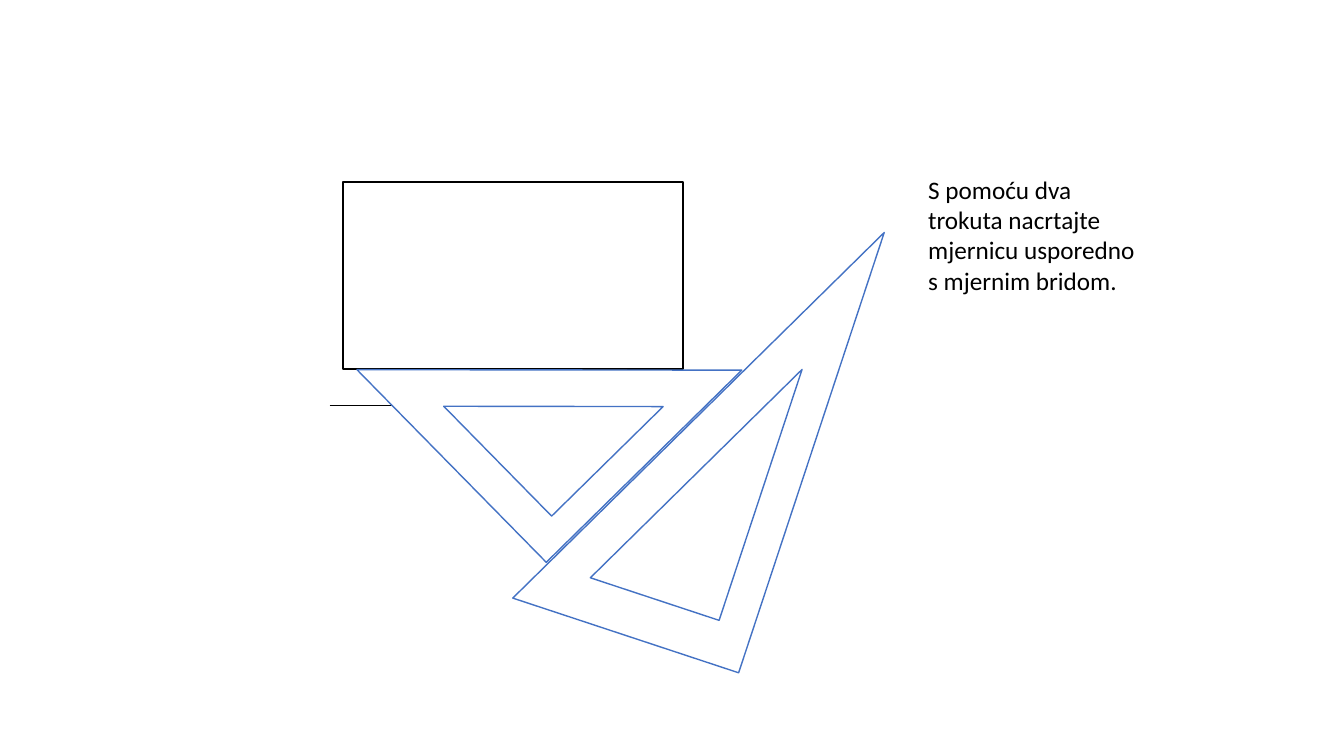
"""Build a slide that shows two set squares drawing a parallel line."""
from lxml import etree
from pptx import Presentation
from pptx import util as u
from pptx.dml.color import RGBColor
from pptx.enum import shapes, text
from pptx.oxml.ns import qn

BLACK = RGBColor(0x00, 0x00, 0x00)
WHITE = RGBColor(0xFF, 0xFF, 0xFF)
BLUE = RGBColor(0x44, 0x72, 0xC4)
FONT = "Calibri"
CELL = u.Inches(0.1)
COLUMNS, ROWS = 133.33, 75
HOLE_SHARE = 0.57


def grid(*cells):
    """Turn grid cells into slide lengths."""
    return [round(cell * CELL) for cell in cells]


def add_outline(slide, kind, box, color, width, angle=0):
    """Add an outlined preset shape in the box and return it."""
    shape = slide.shapes.add_shape(kind, *grid(*box))
    shape.shadow.inherit = False
    shape.rotation = angle
    shape.line.color.rgb = color
    shape.line.width = u.Pt(width)
    return shape


def add_set_square(slide, box, angle, hole_offset):
    """Add a white set square with a hole at the given shares of its box."""
    left, top, width, height = box
    across, down = hole_offset
    hole = (left + across * width, top + down * height,
            HOLE_SHARE * width, HOLE_SHARE * height)
    for part in (box, hole):
        triangle = add_outline(slide, shapes.MSO_SHAPE.RIGHT_TRIANGLE,
                               part, BLUE, 1, angle)
        triangle.fill.solid()
        triangle.fill.fore_color.rgb = WHITE


def add_drawing(slide, box):
    """Add the rectangle, the parallel line and the two set squares."""
    left, top, width, height = box
    rectangle = add_outline(slide, shapes.MSO_SHAPE.RECTANGLE, box, BLACK, 1.5)
    rectangle.fill.background()

    line_row = top + height + 3.6
    line = slide.shapes.add_connector(
        shapes.MSO_CONNECTOR.STRAIGHT,
        *grid(left - 1.3, line_row, left + width + 1.3, line_row))
    line.line.color.rgb = BLACK
    line.line.width = u.Pt(0.75)
    etree.SubElement(line._element.spPr, qn("a:effectLst"))

    add_set_square(slide, (left + 12.3, top + 11.3, 46, 23.6),
                   288.3, (0.21, 0.46))
    add_set_square(slide, (left + 6.9, top + 5.2, 27.2, 26.8),
                   315.5, (0.23, 0.35))


def add_instruction(slide, box, wording):
    """Add the task wording as a wrapped text box."""
    frame = slide.shapes.add_textbox(*grid(*box)).text_frame
    frame.word_wrap = True
    frame.auto_size = text.MSO_AUTO_SIZE.SHAPE_TO_FIT_TEXT
    run = frame.paragraphs[0].add_run()
    run.text = wording
    run.font.name = FONT
    run.font.size = u.Pt(18)
    run.font.color.rgb = BLACK


def main():
    """Build the slide and save it."""
    presentation = Presentation()
    presentation.slide_width, presentation.slide_height = grid(COLUMNS, ROWS)
    slide = presentation.slides.add_slide(presentation.slide_layouts[6])
    add_drawing(slide, (34, 18.1, 33.8, 18.5))
    add_instruction(
        slide, (91.1, 16.8, 23.6, 13.1),
        "S pomoću dva trokuta nacrtajte mjernicu usporedno s mjernim bridom.")
    presentation.save("out.pptx")


if __name__ == "__main__":
    main()
